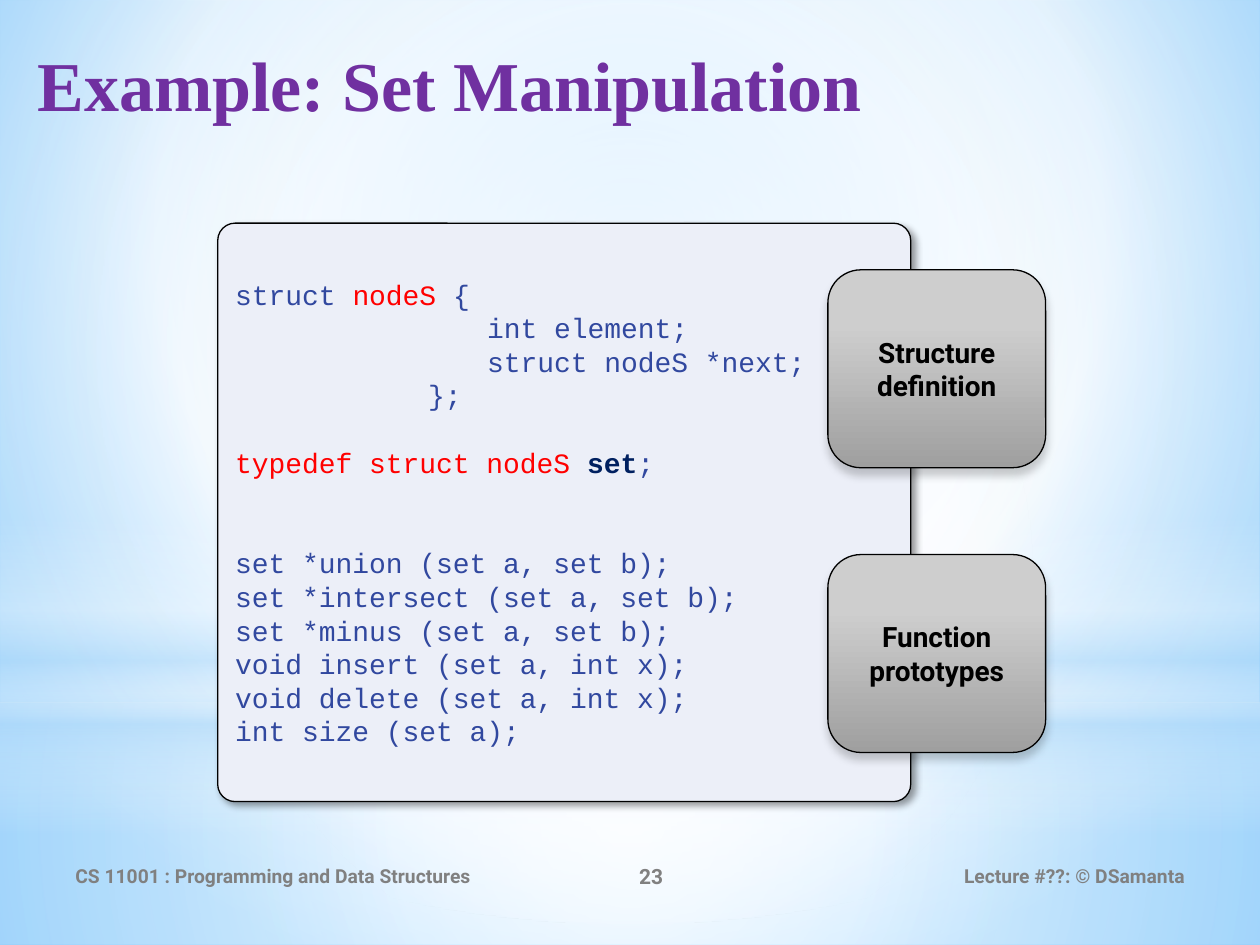
from dataclasses import dataclass

from lxml import etree
from pptx import Presentation
from pptx.dml.color import RGBColor
from pptx.enum import shapes, text
from pptx.oxml.ns import qn
from pptx.util import Cm, Pt

KIND = shapes.MSO_SHAPE
LEFT, MID, RIGHT = text.PP_ALIGN.LEFT, text.PP_ALIGN.CENTER, text.PP_ALIGN.RIGHT
BLUE, RED, NAVY, BLACK = "31489F", "FF0000", "002060", "000000"
LEAD = 19.2


@dataclass
class Grad:
    """Stops are (position %, colour, opacity %); without an angle it is circular."""
    stops: list
    angle: int | None = None
    focus: tuple = (50, 50, 50, 50)


@dataclass
class Shade:
    alpha: int
    blur: int
    dist: int
    angle: int


@dataclass
class Line:
    """A line of code: (text, colour, bold) runs, an indent in cm, blank lines above."""
    runs: list
    indent: float = 0
    gap: int = 0


def color(code: str) -> RGBColor:
    return RGBColor.from_string(code)


def node(root, tag: str, **attrs):
    return etree.SubElement(root, qn(tag), {k: str(v) for k, v in attrs.items()})


def tint(root, code: str, alpha: int) -> None:
    clr = node(root, "a:srgbClr", val=code)
    if alpha < 100:
        node(clr, "a:alpha", val=alpha * 1000)


def blend(owner, root, grad: Grad) -> None:
    """Fill the owner, whose XML is root, with a gradient."""
    owner.fill.background()
    old = root.find(".//" + qn("a:noFill"))
    new = etree.Element(qn("a:gradFill"), rotWithShape="1")
    stops = node(new, "a:gsLst")
    for pos, code, alpha in grad.stops:
        tint(node(stops, "a:gs", pos=pos * 1000), code, alpha)
    if grad.angle is None:
        ring = node(new, "a:path", path="circle")
        node(ring, "a:fillToRect", **{s: v * 1000 for s, v in zip("ltrb", grad.focus)})
    else:
        node(new, "a:lin", ang=grad.angle * 60000, scaled=0)
    old.getparent().replace(old, new)


def draw(slide, kind, box: tuple, fill: Grad | str, edge: bool = False,
         shade: Shade | None = None):
    shape = slide.shapes.add_shape(kind, *map(Cm, box))
    if isinstance(fill, Grad):
        blend(shape, shape.element, fill)
    else:
        shape.fill.solid()
        shape.fill.fore_color.rgb = color(fill)
    if edge:
        shape.line.color.rgb = color(BLACK)
        shape.line.width = Pt(0.75)
    else:
        shape.line.fill.background()
    shape.shadow.inherit = False
    if shade:
        effect = shape.element.spPr.find(qn("a:effectLst"))
        cast = node(effect, "a:outerShdw", blurRad=Pt(shade.blur), dist=Pt(shade.dist),
                    dir=shade.angle * 60000, algn="ctr", rotWithShape=0)
        tint(cast, BLACK, shade.alpha)
    return shape


def style(run, face: str, size: int, code: str, bold: bool) -> None:
    form = {"name": face, "size": Pt(size), "bold": bold}
    for key, val in form.items():
        setattr(run.font, key, val)
    run.font.color.rgb = color(code)


def write(shape, lines: list, face: str, size: int, code: str, align=LEFT,
          anchor=text.MSO_ANCHOR.MIDDLE):
    frame = shape.text_frame
    frame.word_wrap = True
    frame.vertical_anchor = anchor
    for num, words in enumerate(lines):
        para = frame.add_paragraph() if num else frame.paragraphs[0]
        para.alignment = align
        run = para.add_run()
        run.text = words
        style(run, face, size, code, True)
    return frame


def label(slide, box: tuple, *args, **kwargs):
    return write(slide.shapes.add_textbox(*map(Cm, box)), *args, **kwargs)


def listing(shape, lines: list) -> None:
    frame = shape.text_frame
    frame.word_wrap = True
    frame.vertical_anchor = text.MSO_ANCHOR.MIDDLE
    for num, line in enumerate(lines):
        para = frame.add_paragraph() if num else frame.paragraphs[0]
        para.alignment = LEFT
        para.line_spacing = Pt(LEAD)
        para.space_before = Pt(LEAD * line.gap)
        props = para._p.get_or_add_pPr()
        props.set("marL", str(Cm(line.indent)))
        props.set("indent", "0")
        for words, code, bold in line.runs:
            run = para.add_run()
            run.text = words
            style(run, "Courier New", 16, code, bold)


def plain(words: str, indent: float = 0, gap: int = 0) -> Line:
    return Line([(words, BLUE, False)], indent, gap)


WHITE, SKY = "FFFFFF", "B4DCFA"
BACK = Grad([(0, "9ED5FF", 100), (60, WHITE, 100), (100, "5BB9FF", 100)],
            focus=(20, 10, 20, 60))
GLOWS = [
    (KIND.RECTANGLE, (0, 14.17, 25.4, 4.88),
     Grad([(0, WHITE, 91), (37, WHITE, 76), (100, SKY, 79)])),
    (KIND.RECTANGLE, (0, 0, 25.4, 14.17),
     Grad([(0, WHITE, 89), (48, WHITE, 62), (100, SKY, 79)])),
    (KIND.RECTANGLE, (0, 10.46, 25.4, 6.35),
     Grad([(0, WHITE, 0), (29, WHITE, 30), (45, SKY, 40), (55, WHITE, 26),
           (65, SKY, 60), (100, WHITE, 0)], 90)),
    (KIND.OVAL, (0, 4.45, 25.4, 14.17), Grad([(0, WHITE, 100), (56, WHITE, 0)])),
]
FOOT = [
    (1.27, 9.32, "CS 11001 : Programming and Data Structures", 11, LEFT),
    (10.59, 5.08, "23", 12, MID),
    (17.15, 6.99, "Lecture #??: © DSamanta", 11, RIGHT),
]
CODE = [
    Line([("struct ", BLUE, False), ("nodeS ", RED, False), ("{", BLUE, False)]),
    plain("int element;", 5.08),
    plain("struct nodeS *next;", 5.08),
    plain("};", 3.89),
    Line([("typedef struct nodeS ", RED, False), ("set", NAVY, True),
          (";", BLUE, False)], gap=1),
    plain("set *union (set a, set b);", gap=2),
    plain("set *intersect (set a, set b);"),
    plain("set *minus (set a, set b);"),
    plain("void insert (set a, int x);"),
    plain("void delete (set a, int x);"),
    plain("int size (set a);"),
]
TAGS = [(11.18, ["Function", "prototypes"]), (5.44, ["Structure", "definition"])]
STEEL = Grad([(28, "CECECE", 100), (100, "9F9F9F", 100)], 90)


def main() -> None:
    deck = Presentation()
    deck.slide_width, deck.slide_height = Cm(25.4), Cm(19.05)
    slide = deck.slides.add_slide(deck.slide_layouts[6])
    blend(slide.background, slide.element, BACK)
    for kind, box, grad in GLOWS:
        draw(slide, kind, box, grad)

    title = label(slide, (0.51, 0.53, 24.21, 3.18), ["Example: Set Manipulation"],
                  "Times New Roman", 40, "7030A0", anchor=text.MSO_ANCHOR.TOP)
    title.margin_top = Cm(0.31)
    for left, width, words, size, align in FOOT:
        label(slide, (left, 17.15, width, 1.02), [words], "Roboto", size, "808080", align)

    panel = draw(slide, KIND.ROUNDED_RECTANGLE, (4.39, 4.5, 13.97, 11.66), "ECEFF8",
                 True, Shade(40, 4, 3, 45))
    panel.adjustments[0] = 0.03
    listing(panel, CODE)
    for top, words in TAGS:
        tag = draw(slide, KIND.ROUNDED_RECTANGLE, (16.69, top, 4.39, 3.99), STEEL,
                   True, Shade(20, 5, 4, 90))
        write(tag, words, "Roboto", 16, BLACK, MID)
    deck.save("out.pptx")


if __name__ == "__main__":
    main()
